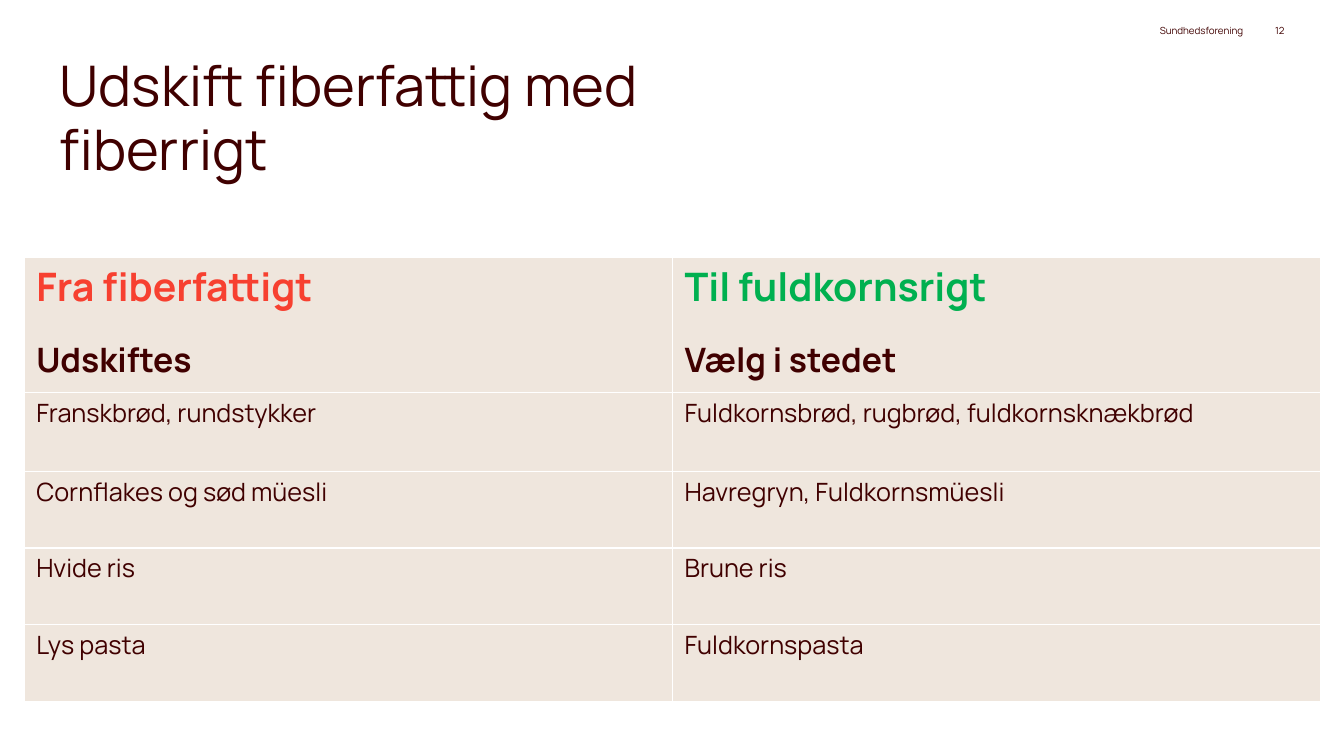
from lxml import etree
from pptx import Presentation
from pptx.dml.color import RGBColor
from pptx.enum import text
from pptx.oxml import ns
from pptx.util import Inches, Pt

DARK, RED, GREEN, SAND, WHITE = "400000", "F74030", "00B050", "EFE6DD", "FFFFFF"


def add_run(paragraph, words, size, color=DARK, bold=False):
    run = paragraph.add_run()
    run.text = words
    run.font.name = "Manrope"
    run.font.size = Pt(size)
    run.font.bold = bold
    run.font.color.rgb = RGBColor.from_string(color)


def add_text(slide, left, top, width, height, words, size):
    frame = slide.shapes.add_textbox(
        Inches(left), Inches(top), Inches(width), Inches(height)).text_frame
    frame.word_wrap = True
    frame.margin_left = frame.margin_right = frame.margin_top = frame.margin_bottom = 0
    add_run(frame.paragraphs[0], words, size)
    return frame


presentation = Presentation()
presentation.slide_width = Inches(13.33)
presentation.slide_height = Inches(7.5)
slide = presentation.slides.add_slide(presentation.slide_layouts[6])

# Title
title = add_text(slide, 0.59, 0.55, 5.96, 1.28, "Udskift fiberfattig med fiberrigt", 40)
title.paragraphs[0].line_spacing = 0.95

# Sender and page number
for left, width, words in [(6.77, 5.56, "Sundhedsforening"), (12.35, 0.39, "12")]:
    frame = add_text(slide, left, 0.2, width, 0.2, words, 7)
    frame.vertical_anchor = text.MSO_ANCHOR.MIDDLE
    frame.paragraphs[0].alignment = text.PP_ALIGN.RIGHT
    frame.paragraphs[0].space_after = Pt(6)

# Table content: each cell is a list of (words, size, color, bold)
headings = [
    [("Fra fiberfattigt", 28, RED, True), ("Udskiftes", 24, DARK, True)],
    [("Til fuldkornsrigt", 28, GREEN, True), ("Vælg i stedet", 24, DARK, True)],
]
swaps = [
    ("Franskbrød, rundstykker", "Fuldkornsbrød, rugbrød, fuldkornsknækbrød"),
    ("Cornflakes og sød müesli", "Havregryn, Fuldkornsmüesli"),
    ("Hvide ris", "Brune ris"),
    ("Lys pasta", "Fuldkornspasta"),
]
rows = [headings] + [[[(food, 18, DARK, False)] for food in swap] for swap in swaps]
row_heights = [1.23, 0.78, 0.76, 0.76, 0.76]

# Table
table = slide.shapes.add_table(
    len(rows), 2, Inches(0.24), Inches(2.55), Inches(12.86), Inches(sum(row_heights))).table
table.first_row = table.horz_banding = False
for column in table.columns:
    column.width = Inches(6.43)

for row_index, row in enumerate(rows):
    table.rows[row_index].height = Inches(row_heights[row_index])
    for column_index, lines in enumerate(row):
        cell = table.cell(row_index, column_index)
        cell.margin_left, cell.margin_top = Inches(0.12), Inches(0.03)
        cell.margin_right, cell.margin_bottom = Inches(0.18), Inches(0.25)
        for line_index, line in enumerate(lines):
            if line_index == 0:
                paragraph = cell.text_frame.paragraphs[0]
            else:
                paragraph = cell.text_frame.add_paragraph()
                paragraph.line_spacing = 1.5
            add_run(paragraph, *line)

        # White borders come before the fill in the cell properties
        properties = cell._tc.get_or_add_tcPr()
        for side in ("a:lnL", "a:lnR", "a:lnT", "a:lnB"):
            border = etree.SubElement(properties, ns.qn(side), w=str(Pt(1)))
            border_fill = etree.SubElement(border, ns.qn("a:solidFill"))
            etree.SubElement(border_fill, ns.qn("a:srgbClr"), val=WHITE)
        cell.fill.solid()
        cell.fill.fore_color.rgb = RGBColor.from_string(SAND)

presentation.save("out.pptx")
